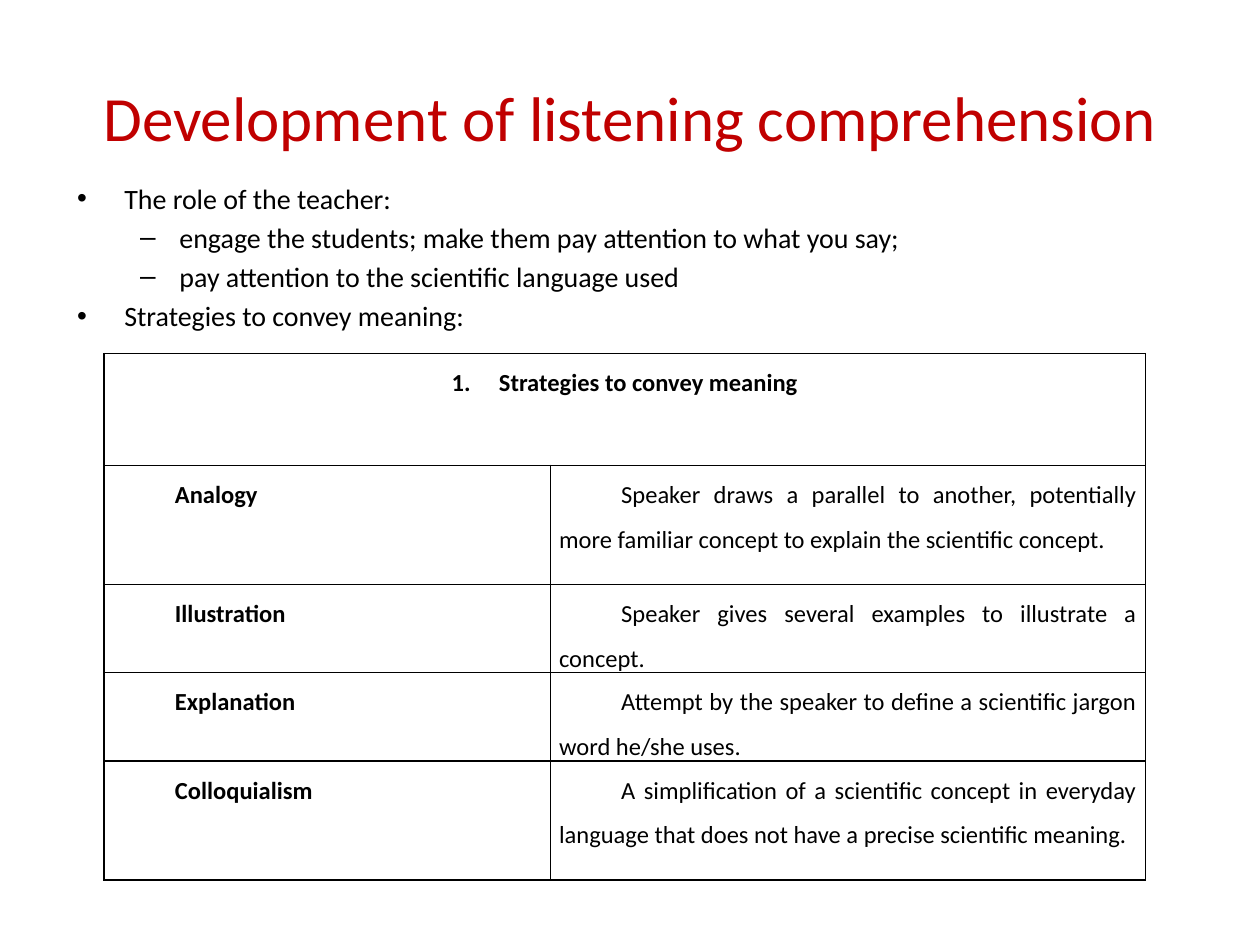
from lxml import etree
from pptx import Presentation
from pptx import util as u
from pptx.dml.color import RGBColor
from pptx.enum import text
from pptx.oxml import ns

Pt = u.Pt
ALIGN = text.PP_ALIGN

THEME = dict(font="Calibri", title="C00000", ink="000000",
             title_size=36, body_size=16, table_size=14)

TITLE = "Development of listening comprehension"
BODY = [
    (0, "The role of the teacher:"),
    (1, "engage the students; make them pay attention to what you say;"),
    (1, "pay attention to the scientific language used"),
    (0, "Strategies to convey meaning:"),
]
LEVELS = [dict(bullet="•", left=27, first=-27),
          dict(bullet="–", left=58.5, first=-22.5)]
HEADING = "Strategies to convey meaning"
STRATEGIES = [
    ("Analogy", "Speaker draws a parallel to another, potentially more familiar "
     "concept to explain the scientific concept."),
    ("Illustration", "Speaker gives several examples to illustrate a concept."),
    ("Explanation", "Attempt by the speaker to define a scientific jargon word he/she uses."),
    ("Colloquialism", "A simplification of a scientific concept in everyday language "
     "that does not have a precise scientific meaning. "),
]
TABLE_AT = (59.5, 202)
COLUMNS = [255, 340]
ROWS = [64, 68, 45, 50, 68]


def add_xml(parent, tag, **attributes):
    el = etree.SubElement(parent, ns.qn(tag))
    for name, value in attributes.items():
        el.set(name, str(value))
    return el


def write(p, content, size, color=THEME["ink"], bold=False, align=ALIGN.LEFT,
          left=0, first=0, bullet=None, number=None, before=0, spacing=None):
    """Fill paragraph p; left and first are its margin and first-line indent."""
    p.alignment = align
    p.space_before = Pt(before)
    if spacing:
        p.line_spacing = spacing
    pPr = p._p.get_or_add_pPr()
    pPr.set("marL", str(Pt(left)))
    pPr.set("indent", str(Pt(first)))
    if bullet:
        add_xml(pPr, "a:buFont", typeface="Arial")
        add_xml(pPr, "a:buChar", char=bullet)
    elif number:
        add_xml(pPr, "a:buFont", typeface="+mj-lt")
        add_xml(pPr, "a:buAutoNum", type=number)
    r = p.add_run()
    r.text = content
    r.font.name, r.font.size, r.font.bold = THEME["font"], Pt(size), bold
    r.font.color.rgb = RGBColor.from_string(color)


def add_box(s, left, top, width, height, anchor):
    tf = s.shapes.add_textbox(Pt(left), Pt(top), Pt(width), Pt(height)).text_frame
    tf.word_wrap = True
    tf.vertical_anchor = anchor
    return tf


def style_cell(cell):
    cell.margin_left = cell.margin_right = Pt(5)
    cell.margin_top = cell.margin_bottom = 0
    tcPr = cell._tc.get_or_add_tcPr()
    for side in ("a:lnL", "a:lnR", "a:lnT", "a:lnB"):
        line = add_xml(tcPr, side, w=Pt(1))
        add_xml(add_xml(line, "a:solidFill"), "a:srgbClr", val=THEME["ink"])
    cell.fill.background()


def add_strategies(s):
    table = s.shapes.add_table(len(ROWS), len(COLUMNS), *map(Pt, TABLE_AT),
                               Pt(sum(COLUMNS)), Pt(sum(ROWS))).table
    table.first_row = table.horz_banding = False
    for column, width in zip(table.columns, COLUMNS):
        column.width = Pt(width)
    for row, height in zip(table.rows, ROWS):
        row.height = Pt(height)
    for cell in table.iter_cells():
        style_cell(cell)
    heading = table.cell(0, 0)
    heading.merge(table.cell(0, len(COLUMNS) - 1))
    size = THEME["table_size"]
    write(heading.text_frame.paragraphs[0], HEADING, size, bold=True, align=ALIGN.CENTER,
          left=27, first=-27, number="arabicPeriod", spacing=1.5)
    for i, strategy in enumerate(STRATEGIES, 1):
        for j, content in enumerate(strategy):
            write(table.cell(i, j).text_frame.paragraphs[0], content, size, bold=j == 0,
                  align=ALIGN.JUSTIFY, first=35.5, spacing=1.5)


def main():
    prs = Presentation()
    prs.slide_width, prs.slide_height = Pt(720), Pt(540)
    s = prs.slides.add_slide(prs.slide_layouts[6])

    tf = add_box(s, 36, 21.6, 648, 90, text.MSO_ANCHOR.MIDDLE)
    write(tf.paragraphs[0], TITLE, THEME["title_size"], THEME["title"], align=ALIGN.CENTER)

    tf = add_box(s, 37, 100, 648, 356, text.MSO_ANCHOR.TOP)
    for i, (level, content) in enumerate(BODY):
        p = tf.add_paragraph() if i else tf.paragraphs[0]
        p.level = level
        write(p, content, THEME["body_size"], before=3.2 if i else 0, **LEVELS[level])

    add_strategies(s)
    prs.save("out.pptx")


if __name__ == "__main__":
    main()
